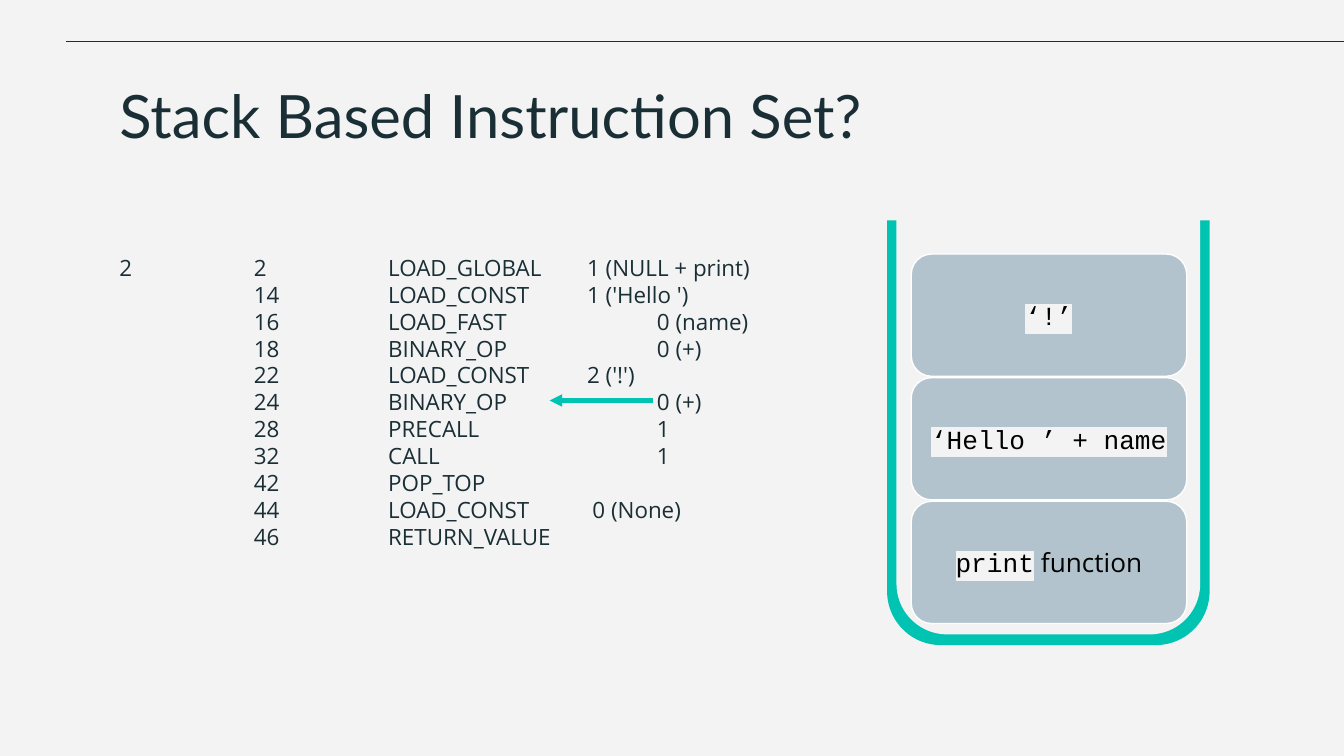
from lxml import etree
from pptx import Presentation
from pptx.dml.color import RGBColor
from pptx.enum import shapes, text
from pptx.oxml.ns import qn
from pptx.util import Inches, Pt

PAPER = RGBColor(0xF3, 0xF3, 0xF3)
INK = RGBColor(0x1A, 0x2E, 0x35)
TEAL = RGBColor(0x00, 0xC3, 0xB1)
STEEL = RGBColor(0xB3, 0xC3, 0xCE)
WHITE = RGBColor(0xFF, 0xFF, 0xFF)
BLACK = RGBColor(0, 0, 0)

SANS, MONO, HEADING = "Open Sans", "Courier New", "Lato"

# Argument columns, measured from the left edge of the listing text
NEAR, PADDED, FAR = 3.48, 3.52, 4.0
BYTECODE = [
    ("2", "2", "LOAD_GLOBAL", "1 (NULL + print)", NEAR),
    ("", "14", "LOAD_CONST", "1 ('Hello ')", NEAR),
    ("", "16", "LOAD_FAST", "0 (name)", FAR),
    ("", "18", "BINARY_OP", "0 (+)", FAR),
    ("", "22", "LOAD_CONST", "2 ('!')", NEAR),
    ("", "24", "BINARY_OP", "0 (+)", FAR),
    ("", "28", "PRECALL", "1", FAR),
    ("", "32", "CALL", "1", FAR),
    ("", "42", "POP_TOP", "", None),
    ("", "44", "LOAD_CONST", "0 (None)", PADDED),
    ("", "46", "RETURN_VALUE", "", None),
]

# Top of the stack first; each value is a list of (words, font, highlight)
STACK = [
    [("‘!’", MONO, PAPER)],
    [("‘Hello ’ + name", MONO, PAPER)],
    [("print", MONO, PAPER), (" function", SANS, None)],
]
STACK_TOP, STACK_STEP = 1.89, 0.92


def add_span(para, words, *, font, size, color=INK, highlight=None):
    span = para.add_run()
    span.text = words
    span.font.name = font
    span.font.size = Pt(size)
    span.font.color.rgb = color
    if highlight is not None:
        mark = etree.Element(qn("a:highlight"))
        etree.SubElement(mark, qn("a:srgbClr"), val=str(highlight))
        span.font._element.find(qn("a:solidFill")).addnext(mark)


def set_frame(box, anchor=text.MSO_ANCHOR.TOP):
    frame = box.text_frame
    frame.word_wrap = True
    frame.vertical_anchor = anchor
    frame.margin_left = frame.margin_right = Inches(0.1)
    frame.margin_top = frame.margin_bottom = Inches(0.1)
    return frame


def add_text_box(page, left, top, width, height):
    box = page.shapes.add_textbox(
        Inches(left), Inches(top), Inches(width), Inches(height))
    return set_frame(box)


def add_block(page, kind, left, top, width, height, *, fill, line=None):
    block = page.shapes.add_shape(
        kind, Inches(left), Inches(top), Inches(width), Inches(height))
    block.shadow.inherit = False
    block.fill.solid()
    block.fill.fore_color.rgb = fill
    if line is None:
        block.line.fill.background()
    else:
        block.line.color.rgb = line
        block.line.width = Pt(0.75)
    return block


def add_line(page, x1, x2, y, *, color, width, arrow=False):
    line = page.shapes.add_connector(
        shapes.MSO_CONNECTOR.STRAIGHT,
        Inches(x1), Inches(y), Inches(x2), Inches(y))
    line.line.color.rgb = color
    line.line.width = Pt(width)
    if arrow:
        etree.SubElement(line.line._get_or_add_ln(), qn("a:tailEnd"),
                         type="triangle")
    etree.SubElement(line._element.spPr, qn("a:effectLst"))


def set_tabs(para, stops):
    tabs = etree.SubElement(para._p.get_or_add_pPr(), qn("a:tabLst"))
    for stop in stops:
        etree.SubElement(tabs, qn("a:tab"), pos=str(Inches(stop)), algn="l")


def add_bytecode(page):
    frame = add_text_box(page, 0.79, 1.79, 4.93, 2.85)
    for row, (*cells, argument_at) in enumerate(BYTECODE):
        para = frame.add_paragraph() if row else frame.paragraphs[0]
        para.line_spacing = Pt(14.4)
        set_tabs(para, [1, 2] + ([argument_at] if argument_at else []))
        add_span(para, "\t".join(cells).rstrip(), font=SANS, size=12)


def add_container(page):
    """Draw the open-topped holder as a teal cup with a paper-coloured inside."""
    for bounds, fill in (((6.6, 1.64, 2.4, 3.16), TEAL),
                         ((6.67, 1.55, 2.26, 3.17), PAPER)):
        cup = add_block(page, shapes.MSO_SHAPE.ROUND_2_SAME_RECTANGLE,
                        *bounds, fill=fill)
        cup.rotation = 180


def add_stack(page):
    for level, value in reversed(list(enumerate(STACK))):
        block = add_block(page, shapes.MSO_SHAPE.ROUNDED_RECTANGLE,
                          6.78, STACK_TOP + level * STACK_STEP, 2.05, 0.91,
                          fill=STEEL, line=WHITE)
        para = set_frame(block, text.MSO_ANCHOR.MIDDLE).paragraphs[0]
        para.alignment = text.PP_ALIGN.CENTER
        for words, font, highlight in value:
            add_span(para, words, font=font, size=14, color=BLACK,
                     highlight=highlight)


def main():
    deck = Presentation()
    deck.slide_width = Inches(10)
    deck.slide_height = deck.slide_width * 9 // 16
    page = deck.slides.add_slide(deck.slide_layouts[6])
    page.background.fill.solid()
    page.background.fill.fore_color.rgb = PAPER

    add_line(page, 0.49, 10, 0.31, color=INK, width=0.75)
    add_bytecode(page)
    title = add_text_box(page, 0.79, 0.49, 8.43, 0.63)
    add_span(title.paragraphs[0], "Stack Based Instruction Set?",
             font=HEADING, size=32)
    add_line(page, 4.86, 4.09, 2.98, color=TEAL, width=2.25, arrow=True)
    add_container(page)
    add_stack(page)
    deck.save("out.pptx")


if __name__ == "__main__":
    main()
